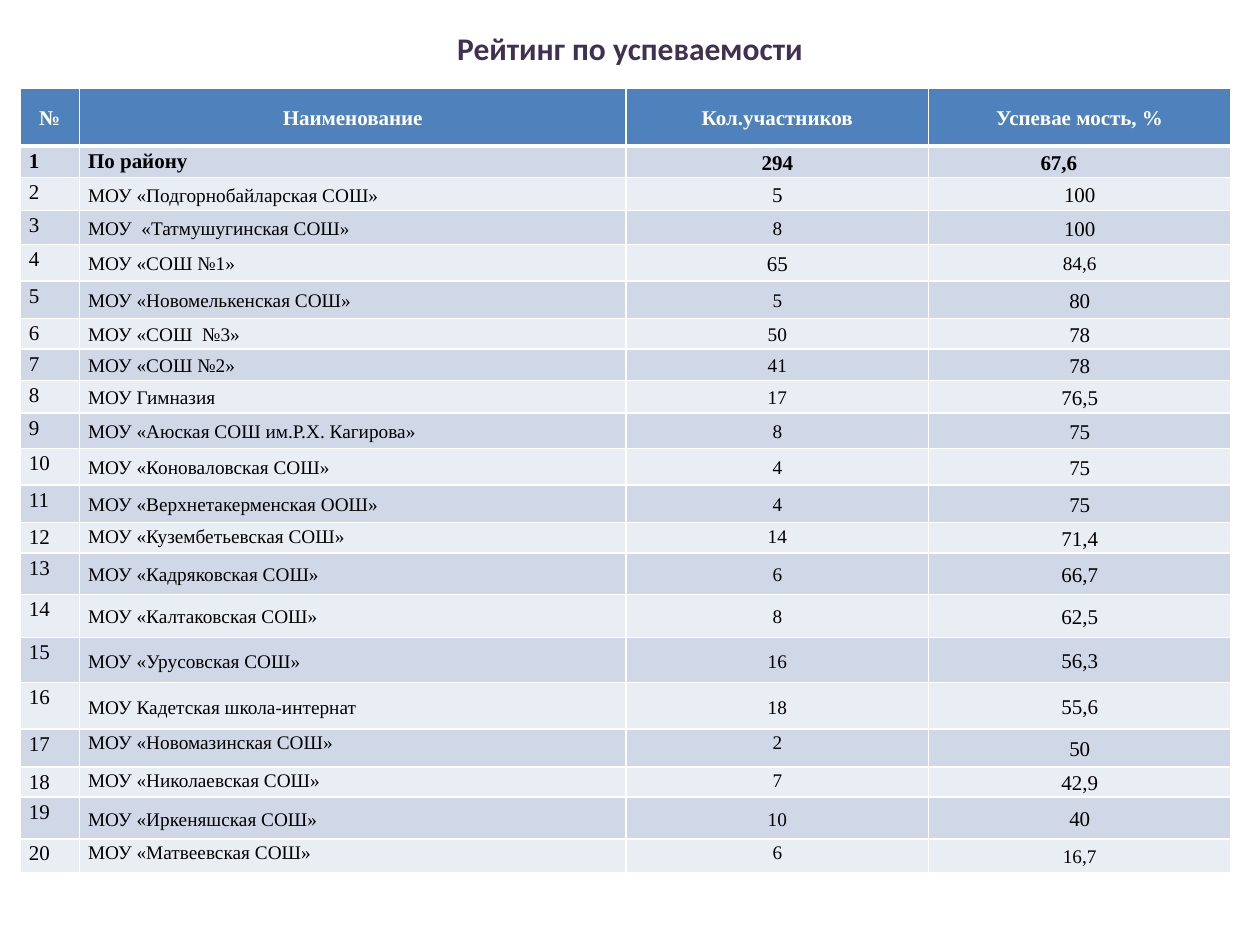
"""Build a slide with a table ranking schools by academic performance."""
from lxml import etree
from pptx import Presentation
from pptx.dml.color import RGBColor
from pptx.enum.text import MSO_ANCHOR, PP_ALIGN
from pptx.oxml.ns import qn
from pptx.util import Inches, Pt

LEFT, CENTER, JUSTIFY = PP_ALIGN.LEFT, PP_ALIGN.CENTER, PP_ALIGN.JUSTIFY
TOP, MIDDLE = MSO_ANCHOR.TOP, MSO_ANCHOR.MIDDLE

COLORS = {
    "title": "403152",
    "header": "4F81BD",
    "odd": "D0D8E8",
    "even": "E9EDF4",
    "white": "FFFFFF",
    "text": "000000",
}
TITLE_FONT = "Calibri"
TABLE_FONT = "Times New Roman"

COL_WIDTHS = [0.47, 4.34, 2.4, 2.4]
HEADER_HEIGHT = 0.46
HEADERS = ["№", "Наименование", "Кол.участников", "Успевае мость, %"]
SCHOOLS = [
    ("По району", "294", "67,6", 0.25),
    ("МОУ «Подгорнобайларская СОШ»", "5", "100", 0.26),
    ("МОУ  «Татмушугинская СОШ»", "8", "100", 0.27),
    ("МОУ «СОШ №1»", "65", "84,6", 0.29),
    ("МОУ «Новомелькенская СОШ»", "5", "80", 0.3),
    ("МОУ «СОШ  №3»", "50", "78", 0.24),
    ("МОУ «СОШ №2»", "41", "78", 0.25),
    ("МОУ Гимназия", "17", "76,5", 0.26),
    ("МОУ «Аюская СОШ им.Р.Х. Кагирова»", "8", "75", 0.28),
    ("МОУ «Коноваловская СОШ»", "4", "75", 0.29),
    ("МОУ «Верхнетакерменская ООШ»", "4", "75", 0.3),
    ("МОУ «Кузембетьевская СОШ»", "14", "71,4", 0.24),
    ("МОУ «Кадряковская СОШ»", "6", "66,7", 0.33),
    ("МОУ «Калтаковская СОШ»", "8", "62,5", 0.34),
    ("МОУ «Урусовская СОШ»", "16", "56,3", 0.36),
    ("МОУ Кадетская школа-интернат", "18", "55,6", 0.37),
    ("МОУ «Новомазинская СОШ»", "2", "50", 0.3),
    ("МОУ «Николаевская СОШ»", "7", "42,9", 0.24),
    ("МОУ «Иркеняшская СОШ»", "10", "40", 0.33),
    ("МОУ «Матвеевская СОШ»", "6", "16,7", 0.27),
]
TOP_ROWS = {12, 17, 18, 20}
LARGE_COUNT_ROWS = {1, 2, 4}
SMALL_RATE_ROWS = {4, 20}


def rgb(name):
    return RGBColor.from_string(COLORS[name])


def add_run(p, text, font, size, color, bold):
    r = p.add_run()
    r.text = text
    r.font.name = font
    r.font.size = Pt(size)
    r.font.bold = bold
    r.font.color.rgb = rgb(color)


def set_borders(cell, bottom=1):
    tc_pr = cell._tc.get_or_add_tcPr()
    for side, width in (("L", 1), ("R", 1), ("T", 1), ("B", bottom)):
        ln = etree.SubElement(tc_pr, qn(f"a:ln{side}"), w=str(Pt(width)))
        fill = etree.SubElement(ln, qn("a:solidFill"))
        etree.SubElement(fill, qn("a:srgbClr"), val=COLORS["white"])


def fill_cell(cell, text, fill, align, anchor=MIDDLE, size=12,
              color="text", bold=False, bottom=1):
    set_borders(cell, bottom)
    cell.fill.solid()
    cell.fill.fore_color.rgb = rgb(fill)
    cell.margin_left = cell.margin_right = Inches(0.07)
    cell.margin_top = cell.margin_bottom = 0
    cell.vertical_anchor = anchor
    p = cell.text_frame.paragraphs[0]
    p.alignment = align
    p.line_spacing = 1.15
    add_run(p, text, TABLE_FONT, size, color, bold)


def add_title(s, text):
    sp = s.shapes.title
    sp.left, sp.top = Inches(0.5), Inches(0.16)
    sp.width, sp.height = Inches(9), Inches(0.7)
    tf = sp.text_frame
    tf.word_wrap = True
    tf.vertical_anchor = MIDDLE
    tf.margin_bottom = Inches(0.31)
    p = tf.paragraphs[0]
    p.alignment = CENTER
    add_run(p, text, TITLE_FONT, 18, "title", True)


def fill_school_row(table, i, name, count, rate):
    fill = "odd" if i % 2 else "even"
    total = i == 1
    anchor = TOP if i in TOP_ROWS else MIDDLE
    fill_cell(table.cell(i, 0), str(i), fill, JUSTIFY, TOP, bold=total)
    fill_cell(table.cell(i, 1), name, fill, JUSTIFY if total else LEFT,
              TOP if total else anchor, 12 if total else 11, bold=total)
    fill_cell(table.cell(i, 2), count, fill, CENTER, anchor,
              12 if i in LARGE_COUNT_ROWS else 11, bold=total)
    fill_cell(table.cell(i, 3), rate, fill, CENTER,
              size=11 if i in SMALL_RATE_ROWS else 12, bold=total)


def add_rating_table(s):
    heights = [HEADER_HEIGHT] + [school[-1] for school in SCHOOLS]
    table = s.shapes.add_table(
        len(heights), len(COL_WIDTHS), Inches(0.16), Inches(0.7),
        Inches(sum(COL_WIDTHS)), Inches(sum(heights))).table
    for col, width in zip(table.columns, COL_WIDTHS):
        col.width = Inches(width)
    for row, height in zip(table.rows, heights):
        row.height = Inches(height)
    for j, text in enumerate(HEADERS):
        fill_cell(table.cell(0, j), text, "header", CENTER,
                  color="white", bold=True, bottom=3)
    for i, (name, count, rate, _) in enumerate(SCHOOLS, 1):
        fill_school_row(table, i, name, count, rate)
    table.cell(1, 3).margin_right = Inches(0.4)


def main():
    prs = Presentation()
    prs.slide_width, prs.slide_height = Inches(10), Inches(7.5)
    s = prs.slides.add_slide(prs.slide_layouts[5])
    add_title(s, "Рейтинг по успеваемости")
    add_rating_table(s)
    prs.save("out.pptx")


if __name__ == "__main__":
    main()
